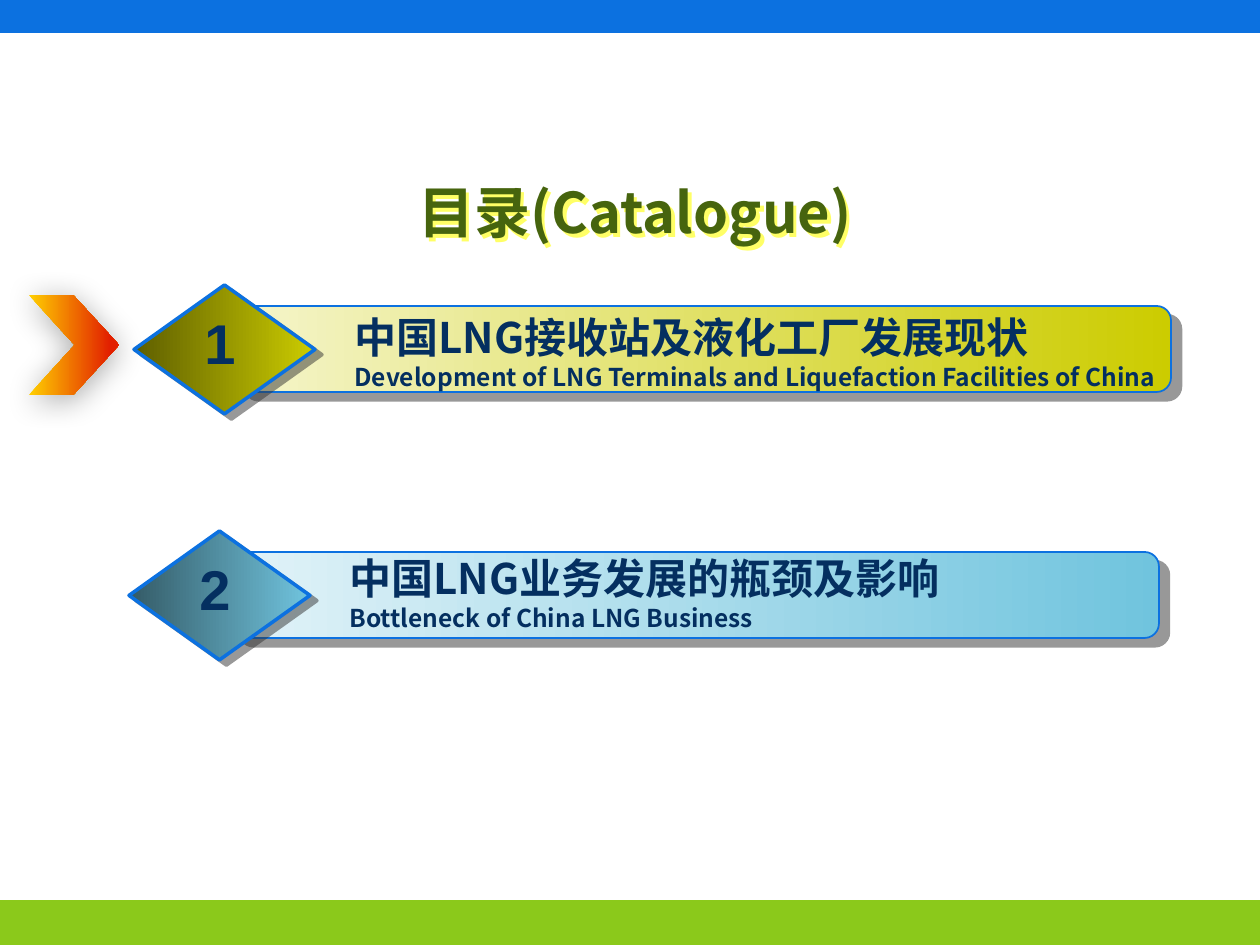
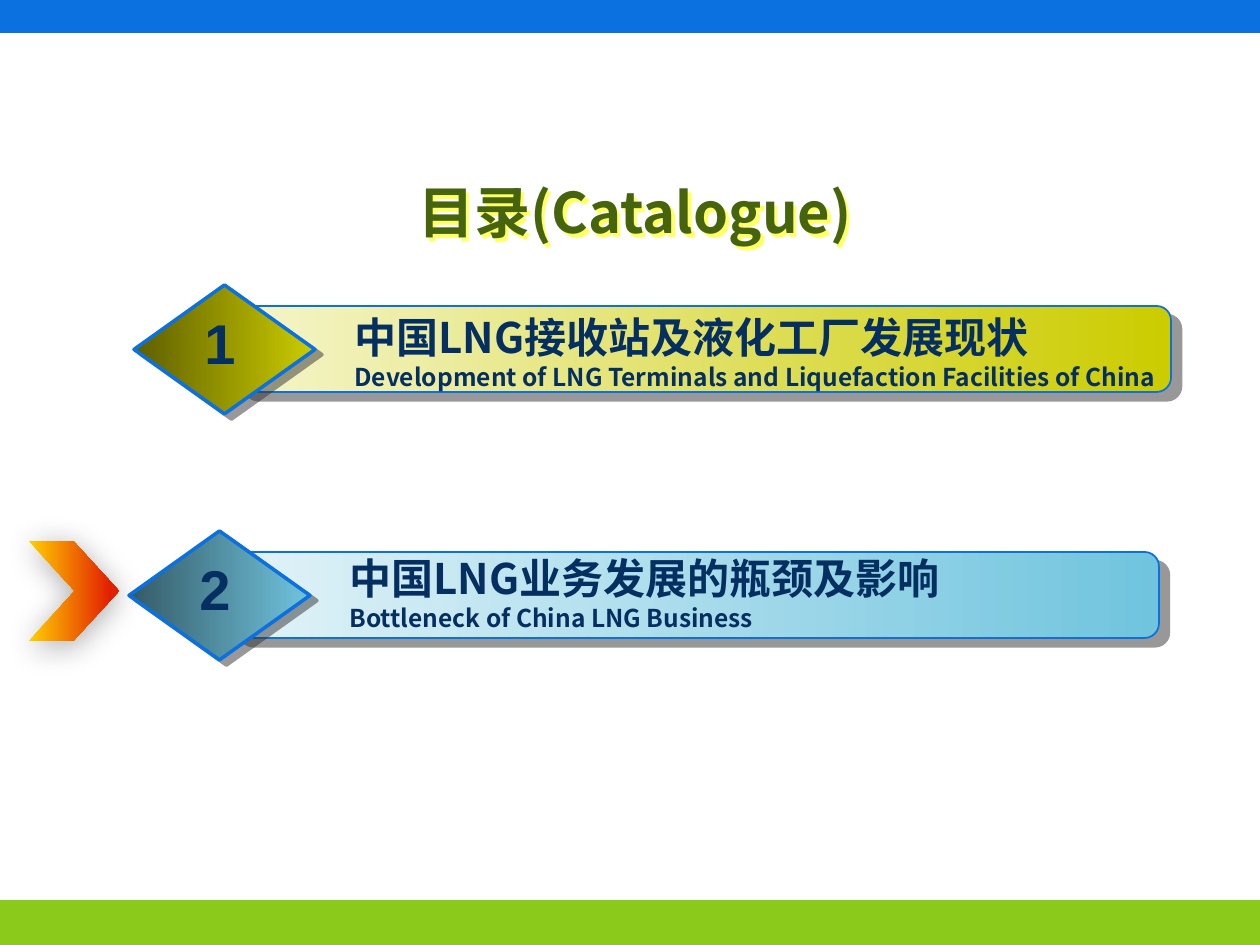
from lxml.etree import SubElement
from pptx import Presentation
from pptx.dml.color import RGBColor
from pptx.enum.shapes import MSO_SHAPE
from pptx.enum.text import MSO_ANCHOR, MSO_AUTO_SIZE, PP_ALIGN
from pptx.oxml.ns import qn
from pptx.util import Emu, Pt

W, H = 1260, 945
EMU_PER_PX = 914400 / 126
BLUE, GREEN, NAVY, OLIVE = "0C71E0", "8BC91B", "042F60", "46640E"
CJK, LATIN = "Noto Sans CJK SC", "Arial"

TITLE = {"size": Pt(32), "name": CJK, "bold": True}
NUMBER = {"size": Pt(32), "name": LATIN, "bold": True}
HEADING = {"size": Pt(24), "name": CJK, "bold": True}
SUBHEADING = {"size": Pt(14), "name": CJK, "bold": True}

# box: left, top, width, height of the row; text_top: text offset in the row
TOPICS = [
    {"box": (134, 285, 1037, 129), "text_top": 20,
     "bar": ("F5F5CC", "CCCC00"), "diamond": ("5E5E00", "CCCC00"),
     "lines": ("中国LNG接收站及液化工厂发展现状",
               "Development of LNG Terminals and Liquefaction Facilities of China")},
    {"box": (129, 531, 1030, 129), "text_top": 15,
     "bar": ("E2F3F8", "70C4DE"), "diamond": ("345A66", "70C4DE"),
     "lines": ("中国LNG业务发展的瓶颈及影响",
               "Bottleneck of China LNG Business")},
]


def px(*values):
    return [Emu(round(v * EMU_PER_PX)) for v in values]


def rgb(color):
    return RGBColor.from_string(color)


def set_shadow(sp, color, alpha, blur, dist, angle):
    sp.shadow.inherit = False
    effects = sp._element.spPr.find(qn("a:effectLst"))
    outer = SubElement(effects, qn("a:outerShdw"), blurRad=str(Pt(blur)),
                       dist=str(Pt(dist)), dir=str(angle * 60000),
                       algn="ctr", rotWithShape="0")
    clr = SubElement(outer, qn("a:srgbClr"), val=color)
    SubElement(clr, qn("a:alpha"), val=str(alpha * 1000))


def add_preset(shapes, kind, box, colors, line=None, adj=None):
    """Add a preset shape with a solid (one colour) or gradient (two) fill."""
    sp = shapes.add_shape(kind, *px(*box))
    sp.shadow.inherit = False
    if len(colors) == 1:
        sp.fill.solid()
        sp.fill.fore_color.rgb = rgb(colors[0])
    else:
        sp.fill.gradient()
        sp.fill.gradient_angle = 0
        for stop, color in zip(sp.fill.gradient_stops, colors):
            stop.color.rgb = rgb(color)
    if line:
        sp.line.color.rgb = rgb(BLUE)
        sp.line.width = Pt(line)
    else:
        sp.line.fill.background()
    if adj:
        sp.adjustments[0] = adj
    return sp


def write(p, text, fmt, color):
    r = p.add_run()
    r.text = text
    for name, value in fmt.items():
        setattr(r.font, name, value)
    r.font.color.rgb = rgb(color)
    SubElement(r.font._element, qn("a:ea"), typeface=fmt["name"])


def add_text(shapes, box, lines, wrap=True, align=PP_ALIGN.LEFT):
    tf = shapes.add_textbox(*px(*box)).text_frame
    tf.word_wrap = wrap
    tf.auto_size = MSO_AUTO_SIZE.SHAPE_TO_FIT_TEXT
    for i, (text, fmt) in enumerate(lines):
        p = tf.add_paragraph() if i else tf.paragraphs[0]
        p.alignment = align
        write(p, text, fmt, NAVY)


def add_bands(s):
    for top, height, color in ((900, 45, GREEN), (0, 33, BLUE)):
        add_preset(s.shapes, MSO_SHAPE.RECTANGLE, (0, top, W, height), [color])


def add_title(s, box):
    sp = s.shapes.title
    sp.left, sp.top, sp.width, sp.height = px(*box)
    tf = sp.text_frame
    tf.word_wrap = False
    tf.auto_size = MSO_AUTO_SIZE.NONE
    tf.vertical_anchor = MSO_ANCHOR.MIDDLE
    p = tf.paragraphs[0]
    p.alignment = PP_ALIGN.CENTER
    p.line_spacing = 1.5
    write(p, "目录(Catalogue)", TITLE, OLIVE)
    set_shadow(sp, "FFFF66", 100, 0, 2.8, 45)


def add_topic(s, number, topic):
    x, y, w, h = topic["box"]
    shapes = s.shapes.add_group_shape().shapes
    # Bar behind the diamond
    bar = add_preset(shapes, MSO_SHAPE.ROUNDED_RECTANGLE,
                     (x + 100, y + 21, w - 100, 86), topic["bar"], 1, 0.167)
    set_shadow(bar, "333333", 50, 0, 7.8, 40)
    # Numbered diamond
    diamond = add_preset(shapes, MSO_SHAPE.DIAMOND, (x, y, 181, h),
                         topic["diamond"], 2)
    set_shadow(diamond, "333333", 50, 0, 5, 37)
    add_text(shapes, (x + 58, y + 17, 56, 81), [(str(number), NUMBER)],
             False, PP_ALIGN.CENTER)
    # Heading in two languages
    add_text(shapes, (x + 208, y + topic["text_top"], w - 208, 93),
             zip(topic["lines"], (HEADING, SUBHEADING)))


def add_marker(s, row_top):
    chevron = add_preset(s.shapes, MSO_SHAPE.CHEVRON,
                         (29, row_top + 10, 90, 100),
                         ("FFCF01", "E22000"), adj=0.508)
    chevron.fill.gradient_stops[1].position = 0.9
    set_shadow(chevron, "000000", 33, 17.8, 3, 87)


def add_catalogue(prs, current):
    s = prs.slides.add_slide(prs.slide_layouts[5])
    add_bands(s)
    add_title(s, (5, 96, W, 197))
    for number, topic in enumerate(TOPICS, 1):
        add_topic(s, number, topic)
    add_marker(s, current["box"][1])


def main():
    prs = Presentation()
    prs.slide_width, prs.slide_height = px(W, H)
    for topic in TOPICS:
        add_catalogue(prs, topic)
    prs.save("out.pptx")


if __name__ == "__main__":
    main()
